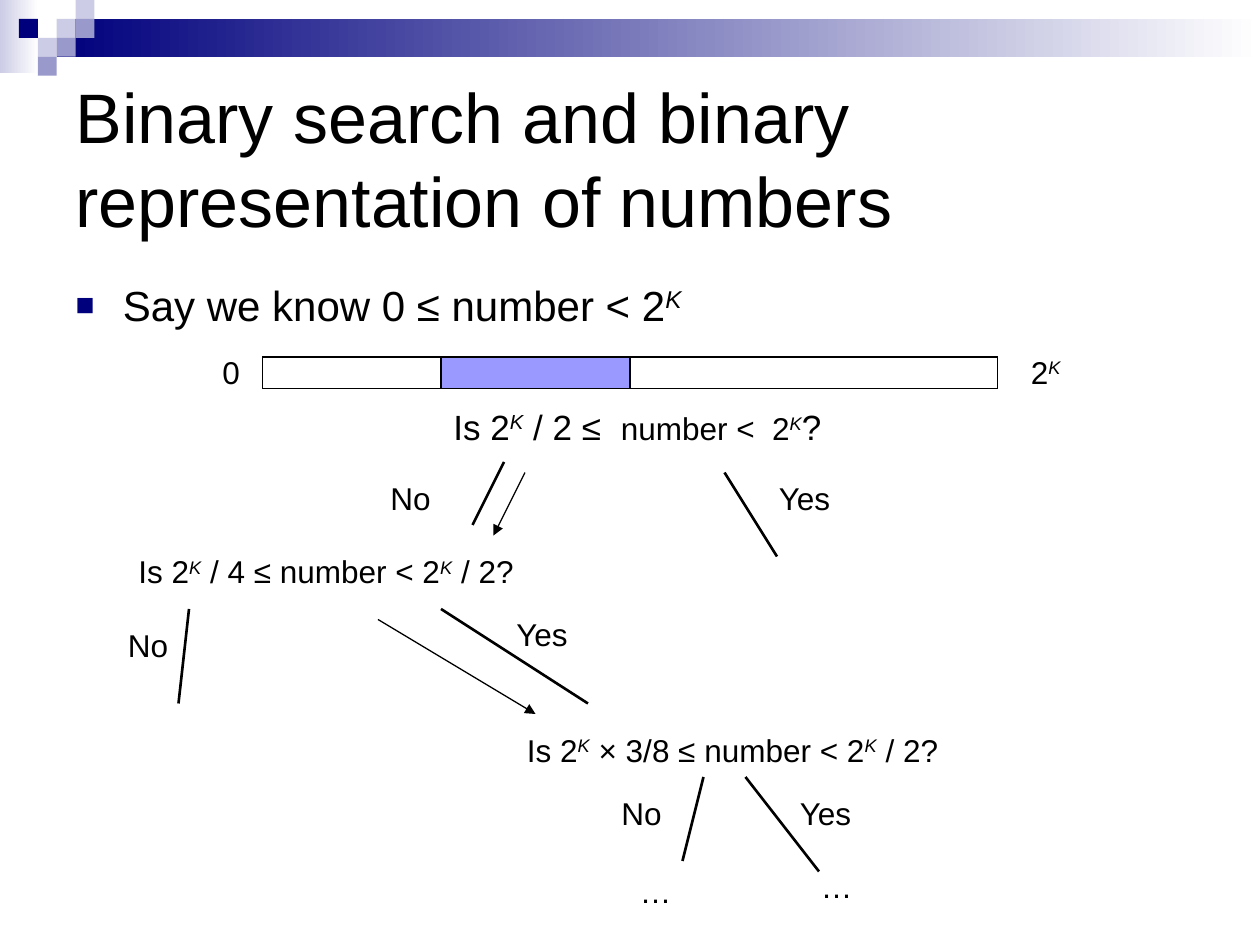
from pptx import Presentation
from pptx.dml.color import RGBColor
from pptx.enum.shapes import MSO_CONNECTOR as Connector, MSO_SHAPE as Shape
from pptx.enum.text import MSO_ANCHOR as Anchor, MSO_AUTO_SIZE as AutoSize, PP_ALIGN as Align
from pptx.oxml.ns import qn
from pptx.util import Pt
from lxml.etree import SubElement

THEME = {
    "font": "Arial",
    "text": RGBColor.from_string("000000"),
    "navy": RGBColor.from_string("00007D"),
    "mid": RGBColor.from_string("9999CC"),
    "pale": RGBColor.from_string("CCCCE6"),
    "white": RGBColor.from_string("FFFFFF"),
    "range": RGBColor.from_string("9999FF"),
    "title_size": 40, "body_size": 24, "root_size": 20, "label_size": 18,
}


def write(paragraph, text, size):
    """Add text to the paragraph, with every K as an italic exponent."""
    for piece in text.replace("K", "|K|").split("|"):
        if piece:
            run = paragraph.add_run()
            run.text = piece
            formats = {"name": THEME["font"], "size": Pt(size), "italic": piece == "K"}
            for name, value in formats.items():
                setattr(run.font, name, value)
            run.font.color.rgb = THEME["text"]
            if piece == "K":
                run.font._element.set("baseline", "30000")


def add_box(left, top, width, height, color, fade=False, outline=False):
    """Add a rectangle, either solid or fading to white on the right."""
    box = slide.shapes.add_shape(Shape.RECTANGLE, Pt(left), Pt(top), Pt(width), Pt(height))
    box.shadow.inherit = False
    if fade:
        box.fill.gradient()
        box.fill.gradient_angle = 0
        for stop, stop_color, position in zip(box.fill.gradient_stops, (color, THEME["white"]), (0, 1)):
            stop.color.rgb = stop_color
            stop.position = position
    else:
        box.fill.solid()
        box.fill.fore_color.rgb = color
    if outline:
        box.line.color.rgb = THEME["text"]
        box.line.width = Pt(0.75)
    else:
        box.line.fill.background()


presentation = Presentation()
presentation.slide_width, presentation.slide_height = Pt(720), Pt(540)
slide = presentation.slides.add_slide(presentation.slide_layouts[1])

# Header band and its checkered corner, on a grid of small squares
add_box(0, 0, 22, 42, THEME["pale"], fade=True)
add_box(32.4, 10.8, 687.6, 21.6, THEME["navy"], fade=True)
square = 10.8
for column, row, color in [(3, 1, "pale"), (4, 0, "pale"), (4, 1, "mid"), (2, 2, "pale"),
                           (1, 1, "navy"), (3, 2, "mid"), (2, 3, "mid")]:
    add_box(column * square, row * square, square, square, THEME[color])

# Title and bullet
title, body = slide.placeholders
for placeholder, top, height, anchor, text, size in [
    (title, 36, 108, Anchor.MIDDLE, "Binary search and binary representation of numbers", "title_size"),
    (body, 156, 306, Anchor.TOP, "Say we know 0 ≤ number < 2K", "body_size"),
]:
    frame = {"left": Pt(36), "top": Pt(top), "width": Pt(648), "height": Pt(height)}
    for name, value in frame.items():
        setattr(placeholder, name, value)
    placeholder.text_frame.auto_size = AutoSize.NONE
    placeholder.text_frame.vertical_anchor = anchor
    paragraph = placeholder.text_frame.paragraphs[0]
    paragraph.alignment = Align.LEFT
    write(paragraph, text, THEME[size])

bullet = body.text_frame.paragraphs[0]._p.get_or_add_pPr()
bullet.set("marL", str(Pt(27)))
bullet.set("indent", str(-Pt(27)))
SubElement(SubElement(bullet, qn("a:buClr")), qn("a:srgbClr"), val=str(THEME["navy"]))
SubElement(bullet, qn("a:buSzPct"), val="75000")
SubElement(bullet, qn("a:buFont"), typeface=THEME["font"])
SubElement(bullet, qn("a:buChar"), char="■")

# Number range, with the excluded parts in white
for left, width, color in [(150, 420, "range"), (360, 210, "white"), (150, 102, "white")]:
    add_box(left, 204, width, 18, THEME[color], outline=True)

# Questions, answers and range ends: left, top, width, parts
root, small = THEME["root_size"], THEME["label_size"]
no_width, yes_width = 37.4, 45.4
for left, top, width, parts in [
    (120, 198, 24.5, [("0", small)]),
    (582, 198, 32.4, [("2K", small)]),
    (252, 228, 226.8, [("Is 2K / 2 ≤  ", root), ("number <  2K", small), ("?", root)]),
    (216, 270, no_width, [("No", small)]),
    (438, 270, yes_width, [("Yes", small)]),
    (72, 312, 231, [("Is 2K / 4 ≤ number < 2K / 2?", small)]),
    (66, 354, no_width, [("No", small)]),
    (288, 348, yes_width, [("Yes", small)]),
    (294, 414, 251.3, [("Is 2K × 3/8 ≤ number < 2K / 2?", small)]),
    (348, 450, no_width, [("No", small)]),
    (450, 450, yes_width, [("Yes", small)]),
    (358.5, 494.5, no_width, [("…", small)]),
    (462, 492, no_width, [("…", small)]),
]:
    label = slide.shapes.add_textbox(Pt(left), Pt(top), Pt(width), Pt(parts[0][1] * 1.2 + 7.2))
    label.text_frame.word_wrap = False
    label.text_frame.auto_size = AutoSize.SHAPE_TO_FIT_TEXT
    for text, size in parts:
        write(label.text_frame.paragraphs[0], text, size)

# Tree branches, then the thin arrows along the path taken
branches = [
    (288, 264, 270, 300), (414, 270, 444, 318),
    (108, 348, 102, 402), (252, 348, 336, 402),
    (402, 444, 390, 492), (426, 444, 468, 498),
]
path_arrows = [(300, 270, 282, 306), (216, 354, 306, 408)]
for ends in branches + path_arrows:
    is_arrow = ends in path_arrows
    line = slide.shapes.add_connector(Connector.STRAIGHT, *map(Pt, ends))
    line.line.color.rgb = THEME["text"]
    line.line.width = Pt(0.75 if is_arrow else 1.5)
    if is_arrow:
        SubElement(line.line._get_or_add_ln(), qn("a:tailEnd"), type="triangle")
    SubElement(line._element.spPr, qn("a:effectLst"))

presentation.save("out.pptx")
